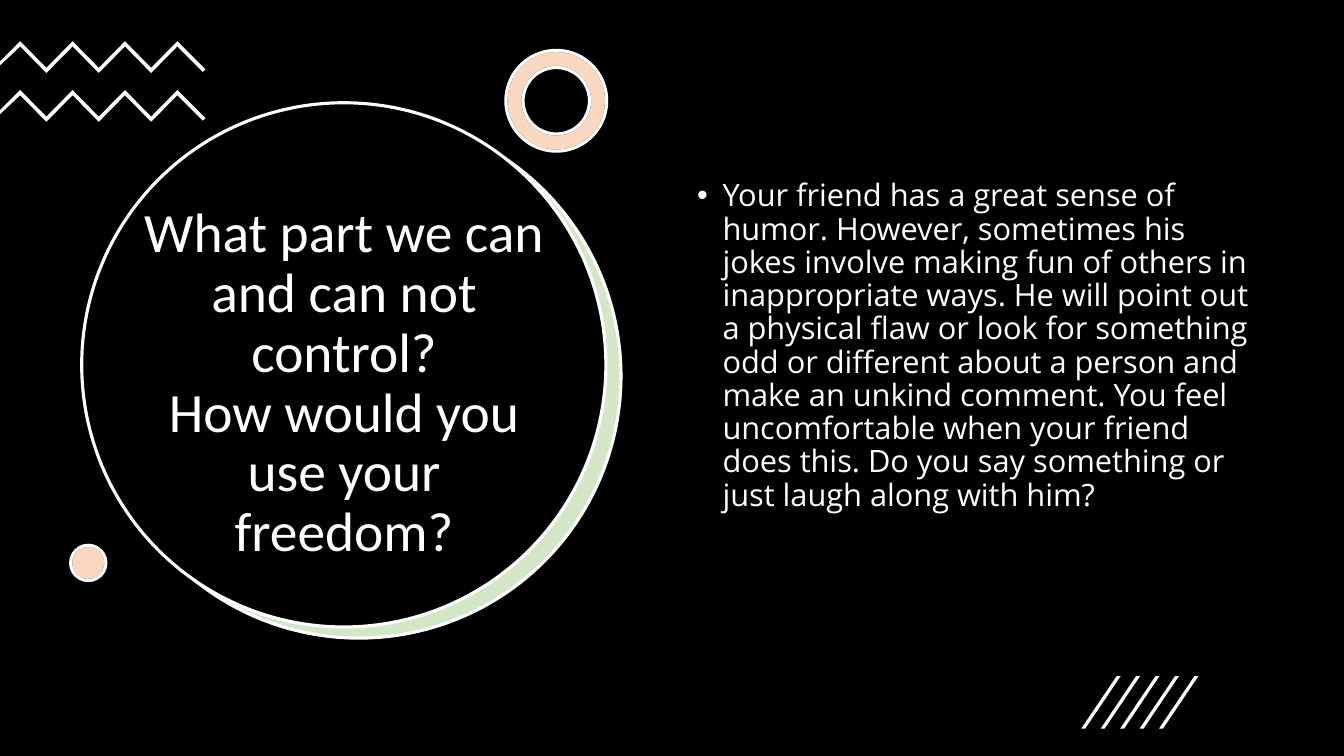
import dataclasses

import pptx
import pptx.dml.color
import pptx.enum.shapes
import pptx.enum.text
import pptx.oxml
import pptx.oxml.ns
import pptx.util

Cm = pptx.util.Cm
Pt = pptx.util.Pt
RGBColor = pptx.dml.color.RGBColor
Kind = pptx.enum.shapes.MSO_SHAPE
Align = pptx.enum.text.PP_ALIGN
Anchor = pptx.enum.text.MSO_ANCHOR
AutoSize = pptx.enum.text.MSO_AUTO_SIZE


@dataclasses.dataclass(frozen=True)
class Theme:
    black: str = "000000"
    white: str = "FFFFFF"
    green: str = "70AD47"
    orange: str = "ED7D31"
    tint: int = 30
    outline: float = 2.25
    title_font: str = "Calibri"
    title_size: float = 39.6
    body_font: str = "Open Sans"
    body_size: float = 22
    line_spacing: float = 0.9


class SlideBuilder:
    def __init__(self, slide, theme):
        self.slide = slide
        self.theme = theme

    def paint(self, shape, fill, line=None, opacity=None):
        shape.shadow.inherit = False
        shape.fill.solid()
        shape.fill.fore_color.rgb = RGBColor.from_string(fill)
        if opacity:
            color = shape.element.spPr.find(".//" + pptx.oxml.ns.qn("a:srgbClr"))
            color.append(pptx.oxml.parse_xml(
                f'<a:alpha {pptx.oxml.ns.nsdecls("a")} val="{opacity * 1000}"/>'))
        if line:
            shape.line.color.rgb = RGBColor.from_string(line)
            shape.line.width = Pt(self.theme.outline)
        else:
            shape.line.fill.background()

    def shape(self, kind, box, fill, line=None, opacity=None, adjustment=None):
        shape = self.slide.shapes.add_shape(kind, *map(Cm, box))
        if adjustment:
            shape.adjustments[0] = adjustment
        self.paint(shape, fill, line, opacity)

    def tinted(self, kind, box, color, base_line=None, adjustment=None):
        """A white base under a translucent colour with a white outline."""
        self.shape(kind, box, self.theme.white, base_line, None, adjustment)
        self.shape(kind, box, color, self.theme.white, self.theme.tint, adjustment)

    def polygons(self, outlines):
        group = self.slide.shapes.add_group_shape()
        for outline in outlines:
            points = [(Cm(x), Cm(y)) for x, y in outline]
            builder = group.shapes.build_freeform(*points[0])
            builder.add_line_segments(points[1:], close=True)
            self.paint(builder.convert_to_shape(), self.theme.white)

    def format_text(self, shape, text, font, alignment, anchor):
        frame = shape.text_frame
        frame.text = text
        frame_format = {"word_wrap": True, "auto_size": AutoSize.NONE,
                        "vertical_anchor": anchor}
        for name, value in frame_format.items():
            setattr(frame, name, value)
        paragraph = frame.paragraphs[0]
        layout = {"alignment": alignment, "line_spacing": self.theme.line_spacing}
        for name, value in layout.items():
            setattr(paragraph, name, value)
        for run in paragraph.runs:
            for name, value in font.items():
                setattr(run.font, name, value)
            run.font.color.rgb = RGBColor.from_string(self.theme.white)
        return paragraph

    def title(self, box, text):
        title = self.slide.shapes.title
        title.left, title.top, title.width, title.height = map(Cm, box)
        title.element.getparent().append(title.element)  # bring to front
        self.format_text(
            title, text,
            {"name": self.theme.title_font, "size": Pt(self.theme.title_size)},
            Align.CENTER, Anchor.MIDDLE)

    def bullet(self, box, text):
        shape = self.slide.shapes.add_textbox(*map(Cm, box))
        paragraph = self.format_text(
            shape, text,
            {"name": self.theme.body_font, "size": Pt(self.theme.body_size)},
            Align.LEFT, Anchor.TOP)
        properties = paragraph._p.get_or_add_pPr()
        properties.set("marL", str(Cm(0.64)))
        properties.set("indent", str(-Cm(0.64)))
        for tag in ('buFont {} typeface="Arial"', 'buChar {} char="•"'):
            declared = tag.format(pptx.oxml.ns.nsdecls("a"))
            properties.append(pptx.oxml.parse_xml(f"<a:{declared}/>"))


def zigzag(top):
    """Outline of a zigzag band that runs in from the left edge."""
    ridge = [(0.51 + 0.66 * i, top + 0.67 * (i % 2)) for i in range(7)]
    underside = [(x, y + 0.13) for x, y in reversed(ridge)]
    tip = [(5.18, top + 0.71), (5.11, top + 0.77)]
    return ridge + tip + underside + [(0, top + 0.61), (0, top + 0.51)]


def stripe(left):
    return [(left + 0.1, 18.36), (left, 18.36), (left + 0.89, 17.04), (left + 0.99, 17.04)]


def main():
    presentation = pptx.Presentation()
    presentation.slide_width = Cm(33.87)
    presentation.slide_height = Cm(19.05)
    theme = Theme()
    slide = presentation.slides.add_slide(presentation.slide_layouts[5])
    builder = SlideBuilder(slide, theme)

    # Black backdrop
    builder.shape(Kind.RECTANGLE, (0, 0, 33.87, 19.05), theme.black)

    # Title circle with its green crescent
    diameter = 13.21
    builder.tinted(Kind.OVAL, (2.44, 2.87, diameter, diameter), theme.green)
    builder.shape(Kind.OVAL, (2.06, 2.59, diameter, diameter), theme.black, theme.white)
    builder.title((3.07, 5.21, 11.2, 8.94),
                  "What part we can and can not control?\vHow would you use your freedom?")

    # Zigzags, ring and dot
    builder.polygons(zigzag(top) for top in (1.04, 2.27))
    builder.tinted(Kind.DONUT, (12.75, 1.27, 2.54, 2.54), theme.orange, theme.black, 0.17)
    builder.tinted(Kind.OVAL, (1.78, 13.74, 0.89, 0.89), theme.orange, theme.black)

    # Scenario
    builder.bullet(
        (17.32, 4.42, 14.5, 10.82),
        "Your friend has a great sense of humor. However, sometimes his jokes involve "
        "making fun of others in inappropriate ways. He will point out a physical flaw "
        "or look for something odd or different about a person and make an unkind "
        "comment. You feel uncomfortable when your friend does this. Do you say "
        "something or just laugh along with him?")

    # Slanted stripes
    builder.polygons(stripe(27.25 + 0.49 * i) for i in range(5))

    presentation.save("out.pptx")


if __name__ == "__main__":
    main()
